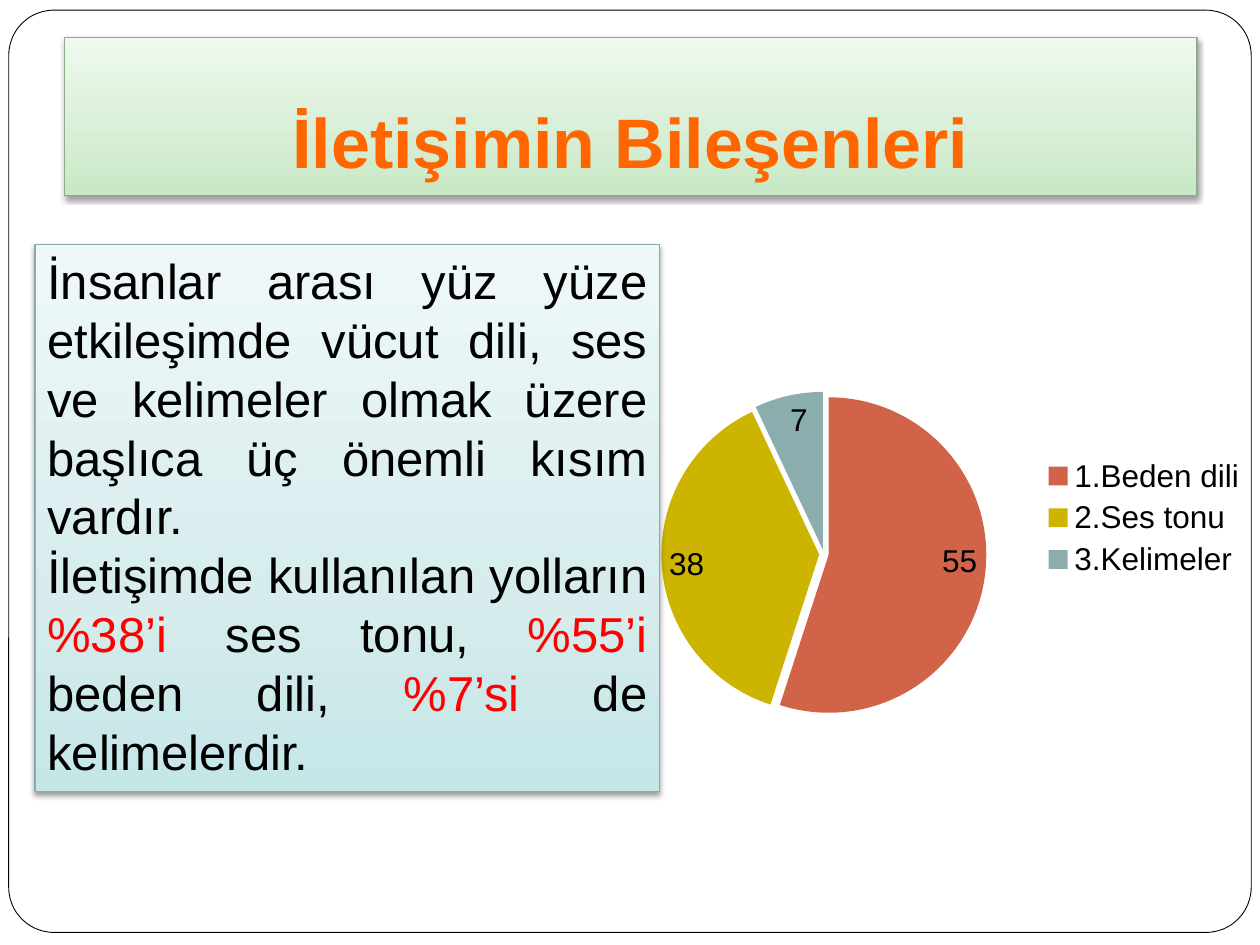
from copy import deepcopy
from dataclasses import dataclass
from typing import NamedTuple

from lxml.etree import SubElement
from pptx import Presentation
from pptx.chart.data import CategoryChartData
from pptx.dml.color import RGBColor
from pptx.enum.chart import XL_CHART_TYPE, XL_LABEL_POSITION, XL_LEGEND_POSITION
from pptx.enum.shapes import MSO_SHAPE
from pptx.enum.text import MSO_ANCHOR, MSO_AUTO_SIZE, PP_ALIGN
from pptx.oxml.ns import qn
from pptx.util import Pt


class Box(NamedTuple):
    left: float
    top: float
    width: float
    height: float

    def lengths(self) -> list[Pt]:
        return [Pt(value) for value in self]


class Panel(NamedTuple):
    """Gradient colours from bottom to top, and the outline colour."""
    bottom: str
    middle: str
    top: str
    outline: str


class Slice(NamedTuple):
    label: str
    percent: int
    color: str


class Span(NamedTuple):
    text: str
    stressed: bool = False


@dataclass(frozen=True)
class Theme:
    font: str = "Arial"
    text: str = "000000"
    paper: str = "FFFFFF"
    heading: str = "FF6600"
    stress: str = "FF0000"
    heading_size: int = 40
    body_size: int = 28
    chart_size: int = 18
    green: Panel = Panel("C7E8C4", "D7EED5", "EFF9EE", "8BAD88")
    teal: Panel = Panel("C5E6E7", "D6ECED", "EFF8F9", "88AAAB")


THEME = Theme()
FRAME_BOX = Box(5, 5.8, 710, 527)
TITLE_BOX = Box(36.72, 21.6, 647.28, 90)
CHART_BOX = Box(360, 145.4, 360, 301)
BODY_BOX = Box(20, 139.7, 357, 312.5)
PLOT = {"x": 0.035, "y": 0.261, "w": 0.546, "h": 0.617}

SLICES = [
    Slice("1.Beden dili", 55, "D16349"),
    Slice("2.Ses tonu", 38, "CCB400"),
    Slice("3.Kelimeler", 7, "8CADAE"),
]
BODY = [
    [Span("İnsanlar arası yüz yüze etkileşimde vücut dili, ses ve kelimeler "
          "olmak üzere başlıca üç önemli kısım vardır.")],
    [Span("İletişimde kullanılan yolların "), Span("%38’i", True),
     Span(" ses tonu, "), Span("%55’i ", True), Span("beden dili, "),
     Span("%7’si ", True), Span("de kelimelerdir.")],
]


def rgb(color: str) -> RGBColor:
    return RGBColor.from_string(color)


def style_panel(shape, panel: Panel) -> None:
    """Give a shape the gradient, thin outline and soft shadow of a panel."""
    shape.fill.gradient()
    shape.fill.gradient_angle = 90
    stop_list = next(shape._element.iter(qn("a:gsLst")))
    stop_list.insert(1, deepcopy(stop_list[0]))
    colors = (panel.bottom, panel.middle, panel.top)
    for stop, position, color in zip(shape.fill.gradient_stops, (0, 0.35, 1), colors):
        stop.position = position
        stop.color.rgb = rgb(color)
    shape.line.color.rgb = rgb(panel.outline)
    shape.line.width = Pt(0.75)

    shape.shadow.inherit = False
    effects = next(shape._element.iter(qn("a:effectLst")))
    shadow = SubElement(effects, qn("a:outerShdw"), blurRad=str(Pt(3.1)),
                        dist=str(Pt(1.6)), dir="5400000", rotWithShape="0")
    black = SubElement(shadow, qn("a:srgbClr"), val=THEME.text)
    SubElement(black, qn("a:alpha"), val="38000")


def add_frame(slide) -> None:
    frame = slide.shapes.add_shape(MSO_SHAPE.ROUNDED_RECTANGLE, *FRAME_BOX.lengths())
    frame.adjustments[0] = 0.049
    frame.fill.solid()
    frame.fill.fore_color.rgb = rgb(THEME.paper)
    frame.line.color.rgb = rgb(THEME.text)
    frame.line.width = Pt(0.5)
    frame.shadow.inherit = False
    slide.shapes._spTree.insert(2, frame._element)  # behind the title


def set_title(slide, wording: str) -> None:
    title = slide.shapes.title
    title.left, title.top, title.width, title.height = TITLE_BOX.lengths()
    style_panel(title, THEME.green)
    frame = title.text_frame
    frame.text = wording
    frame.auto_size = MSO_AUTO_SIZE.NONE
    frame.vertical_anchor = MSO_ANCHOR.BOTTOM
    frame.margin_bottom = Pt(7.2)
    heading = frame.paragraphs[0]
    heading.alignment = PP_ALIGN.CENTER
    heading.font.name = THEME.font
    heading.font.size = Pt(THEME.heading_size)
    heading.font.bold = True
    heading.font.color.rgb = rgb(THEME.heading)


def place_plot(chart) -> None:
    """Fix the inner plot area as fractions of the chart."""
    plot_area = chart._chartSpace.chart.plotArea
    for old in plot_area.findall(qn("c:layout")):
        plot_area.remove(old)
    layout = plot_area.makeelement(qn("c:layout"))
    plot_area.insert(0, layout)
    manual = SubElement(layout, qn("c:manualLayout"))
    settings = {"layoutTarget": "inner", "xMode": "edge", "yMode": "edge", **PLOT}
    for tag, value in settings.items():
        SubElement(manual, qn(f"c:{tag}"), val=str(value))


def add_pie(slide, slices: list[Slice]) -> None:
    data = CategoryChartData()
    data.categories = [part.label for part in slices]
    data.add_series("Series 1", [part.percent for part in slices])
    chart = slide.shapes.add_chart(XL_CHART_TYPE.PIE, *CHART_BOX.lengths(), data).chart
    chart.has_title = False
    chart.font.name = THEME.font
    chart.font.size = Pt(THEME.chart_size)
    chart.font.color.rgb = rgb(THEME.text)
    chart.has_legend = True
    chart.legend.position = XL_LEGEND_POSITION.RIGHT
    chart.legend.include_in_layout = False
    place_plot(chart)

    series = chart.plots[0].series[0]
    for index, part in enumerate(slices):
        fill = series.points[index].format.fill
        fill.solid()
        fill.fore_color.rgb = rgb(part.color)
    explosion = series._element.makeelement(qn("c:explosion"), val="3")
    series._element.find(qn("c:dPt")).addprevious(explosion)
    labels = series.data_labels
    labels.show_value = True
    labels.position = XL_LABEL_POSITION.INSIDE_END


def add_body(slide, paragraphs: list[list[Span]]) -> None:
    body = slide.shapes.add_shape(MSO_SHAPE.RECTANGLE, *BODY_BOX.lengths())
    style_panel(body, THEME.teal)
    frame = body.text_frame
    frame.word_wrap = True
    frame.auto_size = MSO_AUTO_SIZE.SHAPE_TO_FIT_TEXT
    frame.vertical_anchor = MSO_ANCHOR.TOP
    for index, spans in enumerate(paragraphs):
        paragraph = frame.add_paragraph() if index else frame.paragraphs[0]
        paragraph.alignment = PP_ALIGN.JUSTIFY
        paragraph.font.name = THEME.font
        paragraph.font.size = Pt(THEME.body_size)
        for span in spans:
            run = paragraph.add_run()
            run.text = span.text
            run.font.color.rgb = rgb(THEME.stress if span.stressed else THEME.text)


def main() -> None:
    deck = Presentation()
    deck.slide_width, deck.slide_height = Pt(720), Pt(540)
    slide = deck.slides.add_slide(deck.slide_layouts[5])
    add_frame(slide)
    set_title(slide, "İletişimin Bileşenleri")
    add_pie(slide, SLICES)
    add_body(slide, BODY)
    deck.save("out.pptx")


if __name__ == "__main__":
    main()
